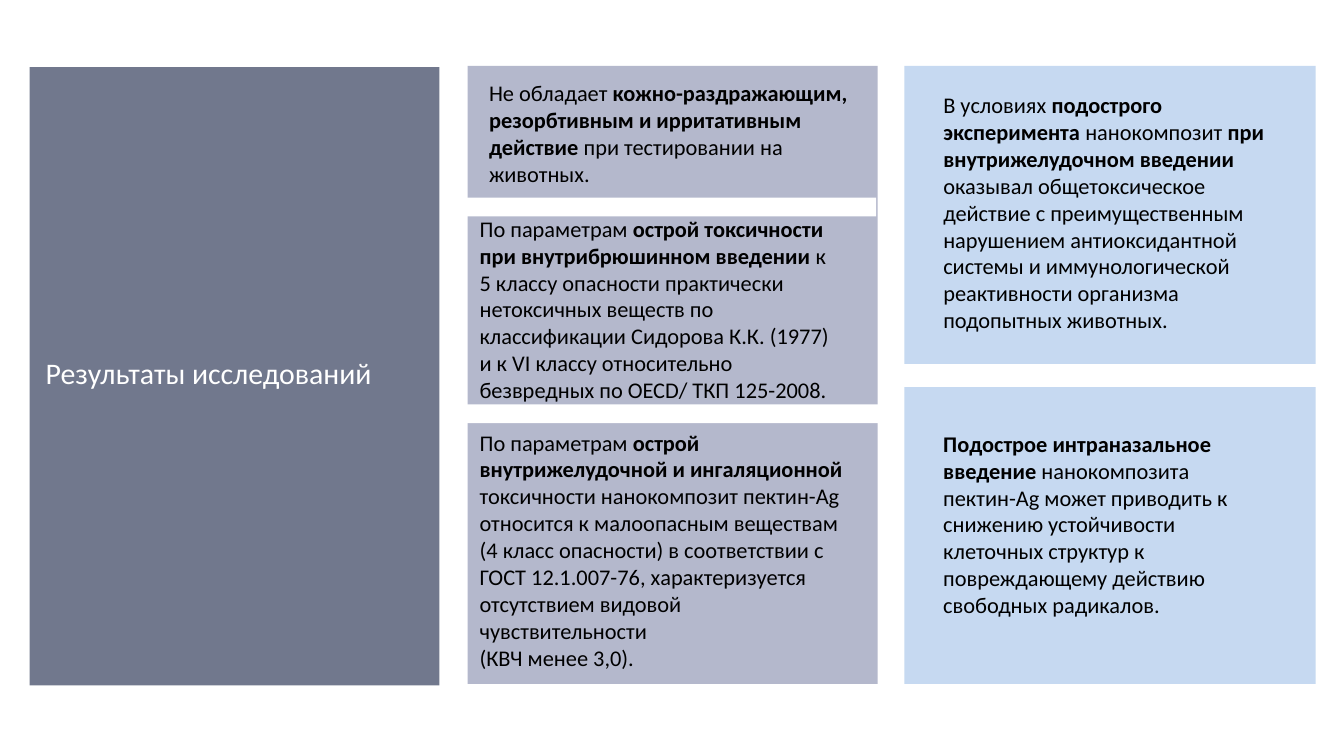
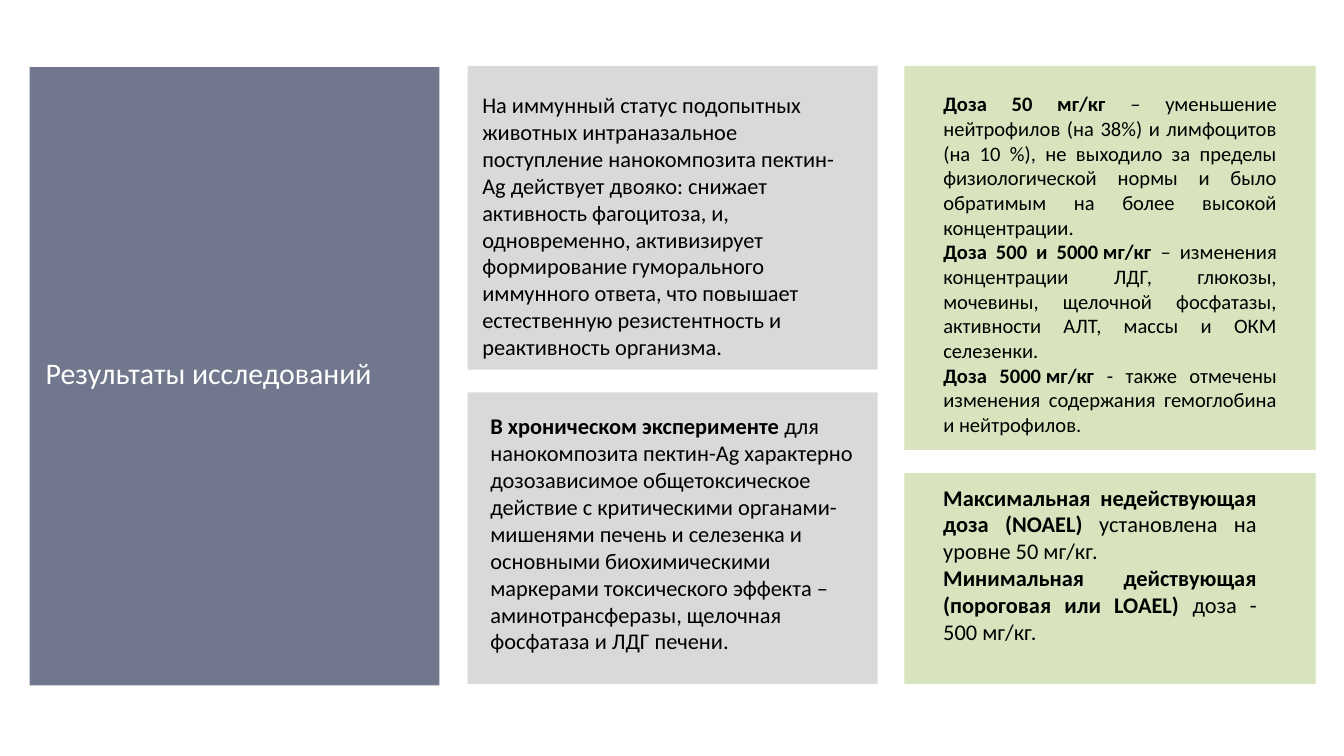
from dataclasses import dataclass

from pptx import Presentation
from pptx.dml.color import RGBColor
from pptx.enum.shapes import MSO_SHAPE
from pptx.enum.text import MSO_ANCHOR, MSO_AUTO_SIZE, PP_ALIGN
from pptx.shapes.autoshape import Shape
from pptx.slide import Slide
from pptx.text.text import TextFrame
from pptx.util import Inches, Pt

RECTANGLE = MSO_SHAPE.RECTANGLE
TOP = MSO_ANCHOR.TOP
FIT_SHAPE = MSO_AUTO_SIZE.SHAPE_TO_FIT_TEXT
LEFT, JUSTIFY = PP_ALIGN.LEFT, PP_ALIGN.JUSTIFY
TITLE_ONLY = 5
SLIDE_WIDTH = Inches(10)
SLIDE_HEIGHT = SLIDE_WIDTH * 9 // 16
NBSP = chr(160)


@dataclass(frozen=True)
class Theme:
    font: str = "Calibri"
    title_size: int = 16
    body_size: int = 12
    small_size: int = 11
    white: str = "FFFFFF"
    black: str = "000000"
    slate: str = "71788D"
    lavender: str = "B4B8CC"
    sky: str = "C6D9F1"
    grey: str = "D9D9D9"
    green: str = "D7E4BD"


THEME = Theme()


@dataclass(frozen=True)
class Box:
    left: float
    top: float
    width: float
    height: float


@dataclass(frozen=True)
class Run:
    text: str
    bold: bool = False


Paragraph = tuple[Run, ...]


@dataclass(frozen=True)
class Finding:
    box: Box
    paragraphs: tuple[Paragraph, ...]
    size: int = THEME.body_size
    align: PP_ALIGN = LEFT


@dataclass(frozen=True)
class ResultsSlide:
    middle_color: str
    right_color: str
    findings: tuple[Finding, ...]
    gaps: tuple[Box, ...]


TITLE = "Результаты исследований"
TITLE_BOX = Box(0.24, 2.59, 3.23, 0.37)
TITLE_PANEL = Box(0.22, 0.5, 3.05, 4.6)
MIDDLE_PANEL = Box(3.48, 0.49, 3.05, 4.6)
RIGHT_PANEL = Box(6.73, 0.49, 3.06, 4.6)
RIGHT_TEXT = 6.92
GAP_WIDTH = 3.23

RESULTS = (
    ResultsSlide(
        THEME.lavender,
        THEME.sky,
        (
            Finding(Box(3.54, 0.54, 2.91, 0.91), ((
                Run("Не обладает "),
                Run("кожно-раздражающим, резорбтивным и ирритативным действие ", True),
                Run("при тестировании на животных."),
            ),)),
            Finding(Box(3.47, 1.55, 2.81, 1.51), ((
                Run("По параметрам "),
                Run("острой токсичности при внутрибрюшинном введении ", True),
                Run("к 5 классу опасности практически нетоксичных веществ по "
                    "классификации Сидорова К.К. (1977) и к VI классу относительно "
                    "безвредных по ОЕСD/ ТКП 125-2008."),
            ),)),
            Finding(Box(3.47, 3.14, 2.91, 1.92), (
                (
                    Run("По параметрам "),
                    Run("острой внутрижелудочной и ингаляционной ", True),
                    Run("токсичности нанокомпозит пектин-Ag относится к малоопасным "
                        "веществам (4 класс опасности) в соответствии с ГОСТ "
                        "12.1.007-76, характеризуется отсутствием видовой "
                        "чувствительности"),
                ),
                (Run("(КВЧ менее 3,0)."),),
            )),
            Finding(Box(RIGHT_TEXT, 0.63, 2.68, 1.92), ((
                Run("В условиях "),
                Run("подострого эксперимента ", True),
                Run("нанокомпозит "),
                Run("при внутрижелудочном введении ", True),
                Run("оказывал общетоксическое действие с преимущественным "
                    "нарушением антиоксидантной системы и иммунологической "
                    "реактивности организма подопытных животных."),
            ),)),
            Finding(Box(RIGHT_TEXT, 3.15, 2.53, 1.51), ((
                Run("Подострое интраназальное введение ", True),
                Run("нанокомпозита пектин-Ag может приводить к снижению "
                    "устойчивости клеточных структур к повреждающему действию "
                    "свободных радикалов."),
            ),)),
        ),
        (
            Box(3.29, 1.47, GAP_WIDTH, 0.14),
            Box(3.39, 3.01, GAP_WIDTH, 0.14),
            Box(6.67, 2.71, GAP_WIDTH, 0.17),
        ),
    ),
    ResultsSlide(
        THEME.grey,
        THEME.green,
        (
            Finding(Box(3.49, 0.63, 2.91, 2.12), ((
                Run("На иммунный статус подопытных животных интраназальное "
                    "поступление нанокомпозита пектин-Ag действует двояко: снижает "
                    "активность фагоцитоза, и, одновременно, активизирует "
                    "формирование гуморального иммунного ответа, что повышает "
                    "естественную резистентность и реактивность организма."),
            ),)),
            Finding(Box(3.55, 3.02, 2.91, 2.12), ((
                Run("В хроническом эксперименте", True),
                Run(" для нанокомпозита пектин-Ag характерно дозозависимое "
                    "общетоксическое действие с критическими органами-мишенями "
                    "печень и селезенка и основными биохимическими маркерами "
                    "токсического эффекта – аминотрансферазы, щелочная фосфатаза "
                    "и ЛДГ печени."),
            ),)),
            Finding(Box(RIGHT_TEXT, 0.63, 2.68, 2.69), (
                (
                    Run("Доза 50 мг/кг ", True),
                    Run("– уменьшение нейтрофилов (на 38%) и лимфоцитов (на 10 %), "
                        "не выходило за пределы физиологической нормы и было "
                        "обратимым на более высокой концентрации. "),
                ),
                (
                    Run(f"Доза 500 и 5000{NBSP}мг/кг ", True),
                    Run("– изменения концентрации ЛДГ, глюкозы, мочевины, щелочной "
                        "фосфатазы, активности АЛТ, массы и ОКМ селезенки."),
                ),
                (
                    Run(f"Доза 5000{NBSP}мг/кг ", True),
                    Run("- также отмечены изменения содержания гемоглобина и "
                        "нейтрофилов."),
                ),
            ), THEME.small_size, JUSTIFY),
            Finding(Box(RIGHT_TEXT, 3.55, 2.53, 1.31), (
                (
                    Run("Максимальная недействующая доза (NOAEL) ", True),
                    Run("установлена на уровне 50 мг/кг."),
                ),
                (
                    Run("Минимальная действующая (пороговая или LOAEL) ", True),
                    Run("доза - 500 мг/кг."),
                ),
            ), align=JUSTIFY),
        ),
        (
            Box(3.37, 2.75, GAP_WIDTH, 0.17),
            Box(6.65, 3.35, GAP_WIDTH, 0.17),
        ),
    ),
)


def lengths(box: Box) -> tuple[Inches, ...]:
    return tuple(Inches(n) for n in (box.left, box.top, box.width, box.height))


def add_panel(slide: Slide, box: Box, color: str) -> Shape:
    panel = slide.shapes.add_shape(RECTANGLE, *lengths(box))
    panel.shadow.inherit = False
    panel.fill.solid()
    panel.fill.fore_color.rgb = RGBColor.from_string(color)
    panel.line.fill.background()
    return panel


def write_text(frame: TextFrame, paragraphs: tuple[Paragraph, ...], size: int,
               color: str, align: PP_ALIGN) -> None:
    frame.word_wrap = True
    frame.auto_size = FIT_SHAPE
    frame.vertical_anchor = TOP
    for index, runs in enumerate(paragraphs):
        paragraph = frame.add_paragraph() if index else frame.paragraphs[0]
        paragraph.alignment = align
        for part in runs:
            run = paragraph.add_run()
            run.text = part.text
            run.font.name = THEME.font
            run.font.size = Pt(size)
            run.font.bold = part.bold
            run.font.color.rgb = RGBColor.from_string(color)


def add_title(slide: Slide) -> None:
    """Put the title placeholder in front of its own panel."""
    panel = add_panel(slide, TITLE_PANEL, THEME.slate)
    title = slide.shapes.title
    title.left, title.top, title.width, title.height = lengths(TITLE_BOX)
    write_text(title.text_frame, ((Run(TITLE),),), THEME.title_size,
               THEME.white, LEFT)
    panel.element.addnext(title.element)


def add_finding(slide: Slide, finding: Finding) -> None:
    text_box = slide.shapes.add_textbox(*lengths(finding.box))
    write_text(text_box.text_frame, finding.paragraphs, finding.size,
               THEME.black, finding.align)


def add_results(deck: Presentation, results: ResultsSlide) -> None:
    slide = deck.slides.add_slide(deck.slide_layouts[TITLE_ONLY])
    add_title(slide)
    add_panel(slide, RIGHT_PANEL, results.right_color)
    add_panel(slide, MIDDLE_PANEL, results.middle_color)
    for finding in results.findings:
        add_finding(slide, finding)
    for gap in results.gaps:
        add_panel(slide, gap, THEME.white)


def main() -> None:
    deck = Presentation()
    deck.slide_width, deck.slide_height = SLIDE_WIDTH, SLIDE_HEIGHT
    for results in RESULTS:
        add_results(deck, results)
    deck.save("out.pptx")


if __name__ == "__main__":
    main()
